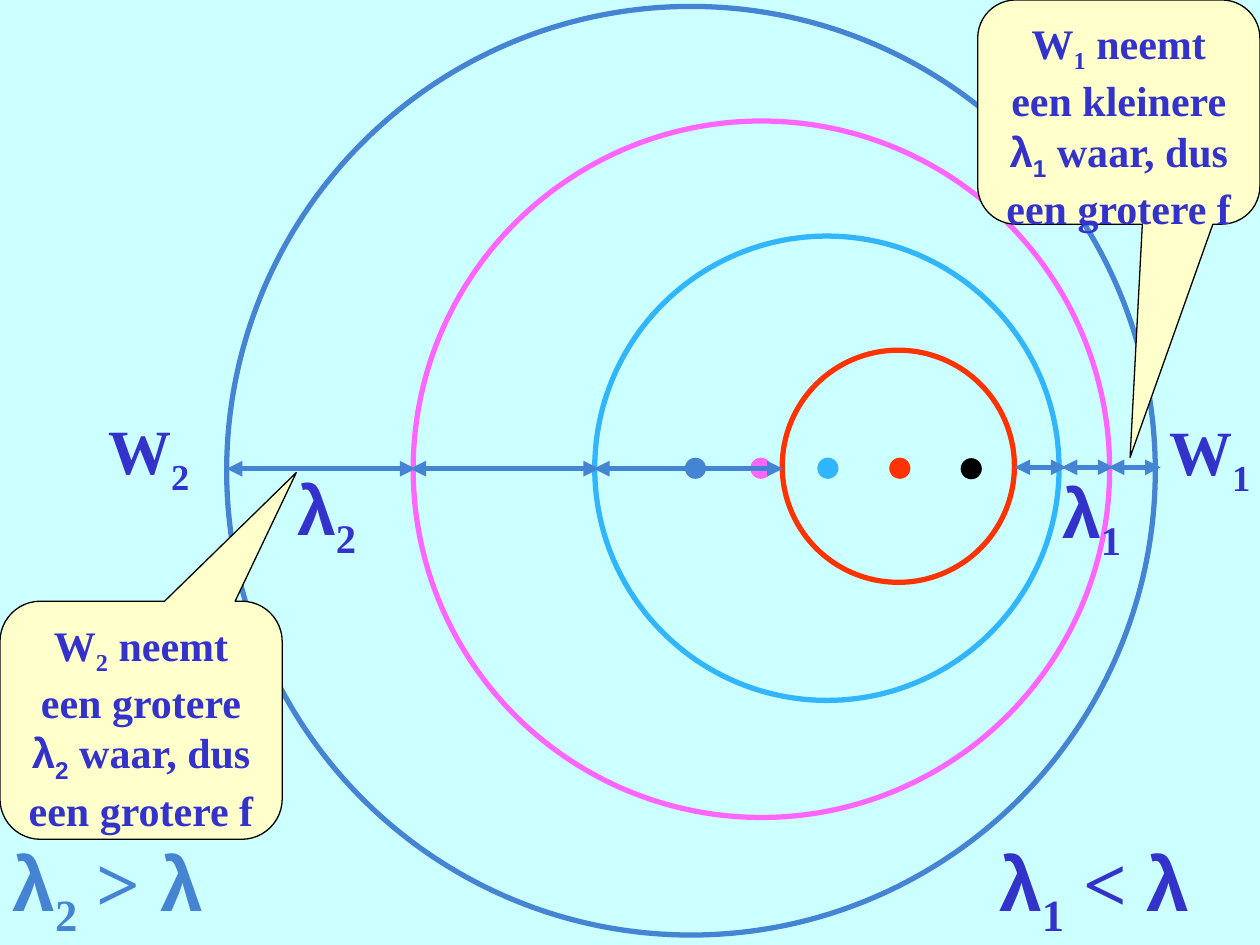
"""Build the slide on wavelengths in front of and behind a moving source."""
from dataclasses import dataclass

import pptx
import pptx.dml.color
import pptx.enum.shapes
import pptx.enum.text
import pptx.oxml
import pptx.oxml.ns
import pptx.util
from pptx.util import Cm

SHAPE = pptx.enum.shapes.MSO_SHAPE
ANCHOR = pptx.enum.text.MSO_ANCHOR
ALIGN = pptx.enum.text.PP_ALIGN


@dataclass(frozen=True)
class Theme:
    background: str = "CCFFFF"
    ink: str = "3333CC"
    blue: str = "4584D3"
    sky: str = "31B6FD"
    pink: str = "FF66FF"
    red: str = "FF3300"
    black: str = "000000"
    note: str = "FFFFCC"
    serif: str = "Times New Roman"
    sans: str = "Arial"
    formula_size: int = 44
    lambda_size: int = 40
    observer_size: int = 36
    note_size: int = 24
    thick: float = 3
    thin: float = 0.75


T = Theme()


def rgb(value):
    return pptx.dml.color.RGBColor.from_string(value)


def write(tf, runs, size, color=T.ink, align=None):
    """Fill a frame with (text, font name, is subscript) runs."""
    tf.word_wrap = True
    p = tf.paragraphs[0]
    p.alignment = align
    p.font.size = pptx.util.Pt(size)
    p.font.bold = True
    p.font.color.rgb = rgb(color)
    names = {name for _, name, _ in runs}
    if len(names) == 1:
        p.font.name = names.pop()
    for text, name, subscript in runs:
        r = p.add_run()
        r.text = text
        if p.font.name is None:
            r.font.name = name
        if subscript:
            r._r.get_or_add_rPr().set("baseline", "-25000")


def add_label(s, x, y, w, h, runs, size, color=T.ink, anchor=ANCHOR.TOP):
    tf = s.shapes.add_textbox(Cm(x), Cm(y), Cm(w), Cm(h)).text_frame
    tf.vertical_anchor = anchor
    write(tf, runs, size, color)


def add_shape(s, kind, x, y, w, h, fill, line, width):
    sp = s.shapes.add_shape(kind, Cm(x), Cm(y), Cm(w), Cm(h))
    sp.shadow.inherit = False
    if fill:
        sp.fill.solid()
        sp.fill.fore_color.rgb = rgb(fill)
    else:
        sp.fill.background()
    sp.line.color.rgb = rgb(line)
    sp.line.width = pptx.util.Pt(width)
    return sp


def add_circle(s, cx, cy, radius, fill, line, width):
    add_shape(s, SHAPE.OVAL, cx - radius, cy - radius, 2 * radius, 2 * radius,
              fill, line, width)


def add_arrow(s, x, y, length):
    """Add a horizontal double-headed arrow."""
    sp = s.shapes.add_connector(pptx.enum.shapes.MSO_CONNECTOR.STRAIGHT,
                                Cm(x), Cm(y), Cm(x + length), Cm(y))
    sp.line.color.rgb = rgb(T.blue)
    sp.line.width = pptx.util.Pt(T.thick)
    ln = sp.line._get_or_add_ln()
    for end in ("a:headEnd", "a:tailEnd"):
        pptx.oxml.ns.qn(end)
        el = pptx.oxml.xmlchemy.OxmlElement(end)
        el.set("type", "triangle")
        ln.append(el)
    sp._element.spPr.append(pptx.oxml.xmlchemy.OxmlElement("a:effectLst"))


def add_note(s, x, y, h, adjustments, number, change):
    """Add a callout on what an observer perceives."""
    sp = add_shape(s, SHAPE.ROUNDED_RECTANGULAR_CALLOUT, x, y, 5.69, h,
                   T.note, T.black, T.thin)
    for i, value in enumerate(adjustments):
        sp.adjustments[i] = value
    sp.text_frame.vertical_anchor = ANCHOR.TOP
    runs = [("W", T.serif, False), (number, T.serif, True),
            (f" neemt een {change} ", T.serif, False),
            ("λ", T.sans, False), (number, T.sans, True),
            (" waar, dus een grotere f", T.serif, False)]
    write(sp.text_frame, runs, T.note_size, align=ALIGN.CENTER)


def add_waves(s):
    """Add the wave fronts and the source positions they started from."""
    waves = [(18.11, 9.4, 18.14, T.red), (16.67, 9.44, 16.69, T.sky),
             (15.35, 9.46, 15.34, T.pink), (13.93, 9.49, 14.02, T.blue)]
    add_circle(s, 19.58, 9.45, 0.2, T.black, T.black, T.thin)
    for n, (cx, cy, dot_x, color) in enumerate(waves, 1):
        add_circle(s, cx, cy, 2.34 * n, None, color, T.thick)
        add_circle(s, dot_x, 9.44, 0.2, color, color, T.thin)


def main():
    prs = pptx.Presentation()
    prs.slide_width, prs.slide_height = Cm(25.4), Cm(19.05)
    s = prs.slides.add_slide(prs.slide_layouts[6])
    s.background.fill.solid()
    s.background.fill.fore_color.rgb = rgb(T.background)

    add_waves(s)
    for x, y, step, length in [(4.57, 9.45, 3.7, 3.81), (20.45, 9.42, 0.95, 1.05)]:
        for n in range(3):
            add_arrow(s, x + n * step, y, length)

    sides = [("2", ">", T.blue, 0, (1.93, 8.18), (5.74, 9.27)),
             ("1", "<", T.ink, 19.89, (23.32, 8.2), (21.16, 9.32))]
    for number, sign, color, formula_x, observer, wavelength in sides:
        symbol = [("λ", T.sans, False), (number, T.serif, True)]
        add_label(s, *observer, 2.34, 1.78,
                  [("W", T.serif, False), (number, T.serif, True)], T.observer_size)
        add_label(s, *wavelength, 2.34, 1.96, symbol, T.lambda_size)
        add_label(s, formula_x, 16.94, 5.51, 1.9,
                  symbol + [(f" {sign} ", T.serif, False), ("λ", T.sans, False)],
                  T.formula_size, color, ANCHOR.MIDDLE)

    add_note(s, 19.71, 0, 4.52, (0.04, 1.54, 0.17), "1", "kleinere")
    add_note(s, 0, 12.12, 4.8, (0.55, -1.04, 0.17), "2", "grotere")
    prs.save("out.pptx")


if __name__ == "__main__":
    main()
